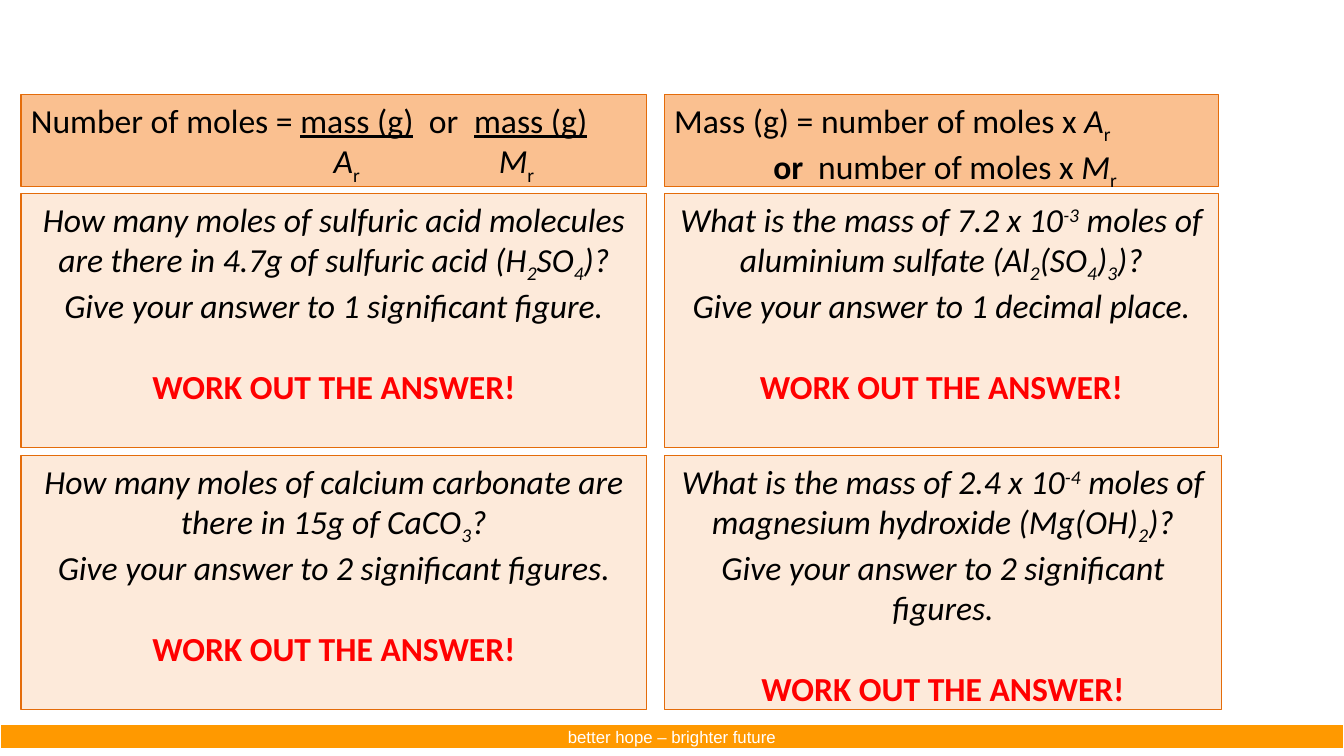
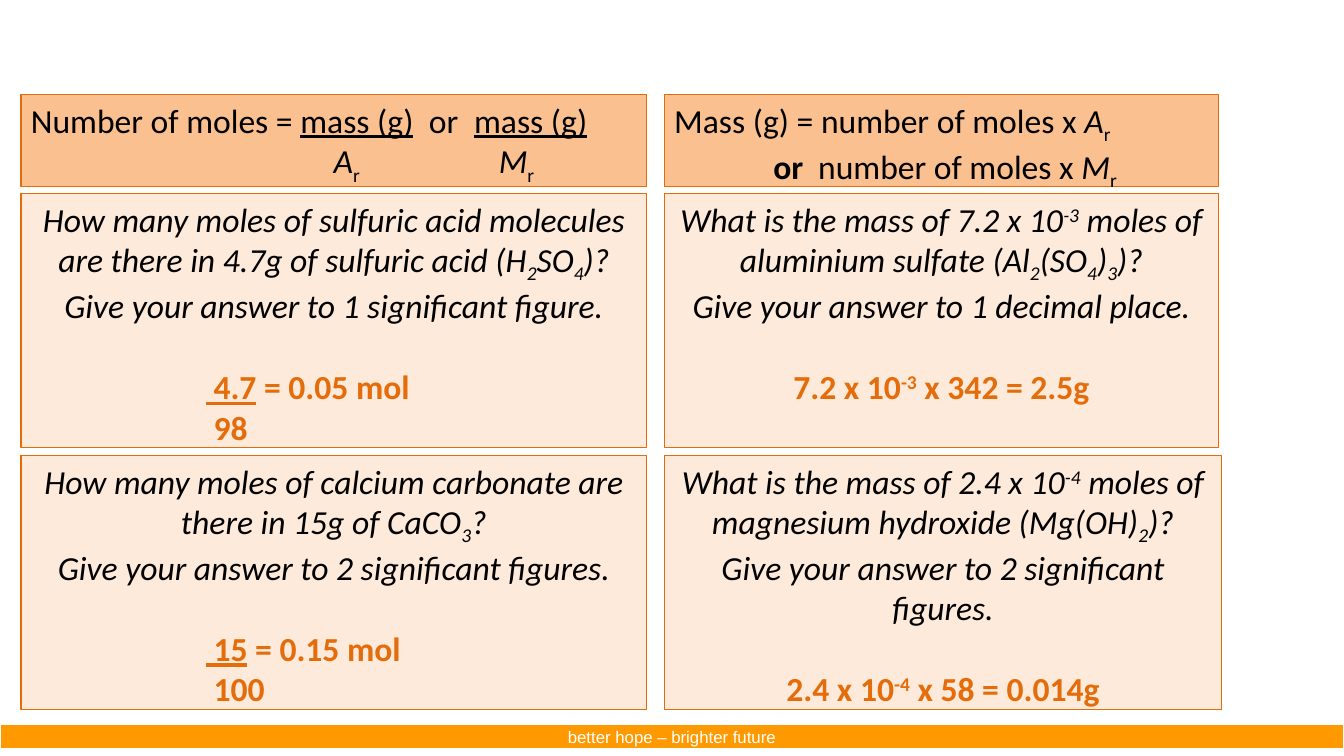
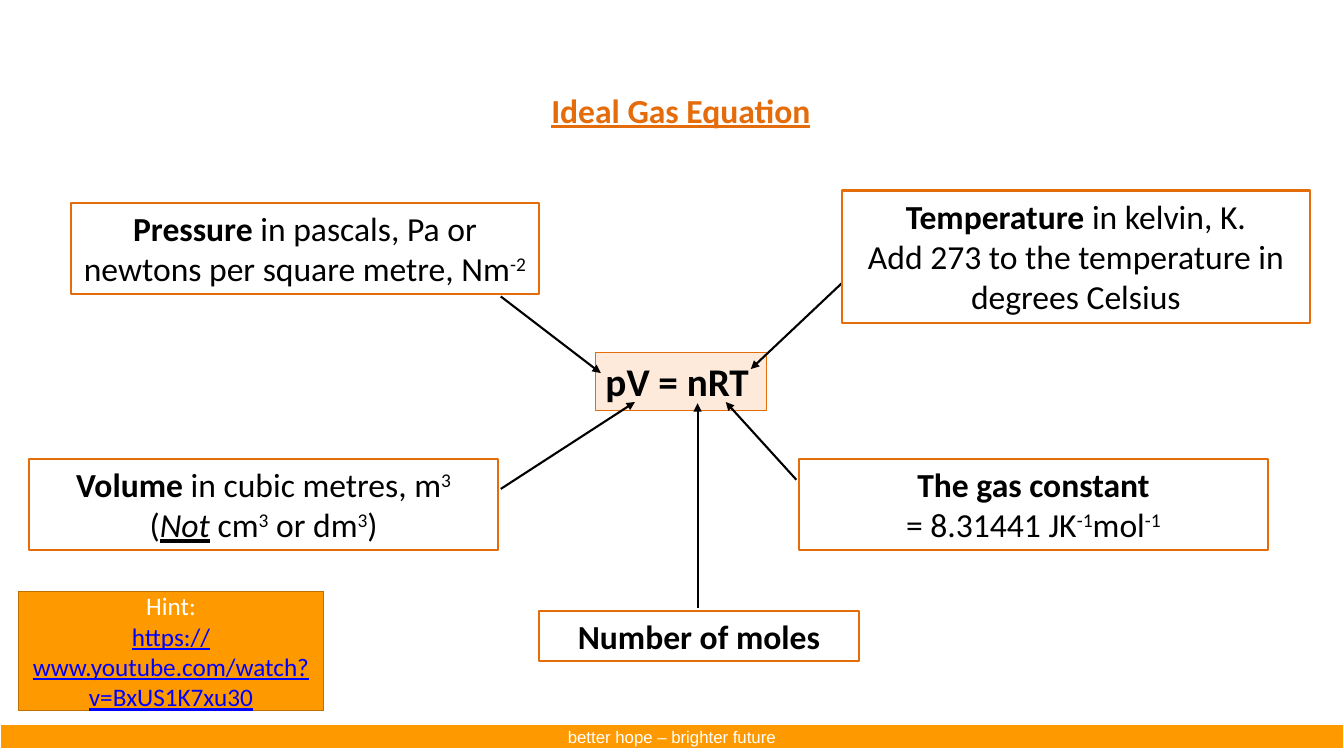
from dataclasses import dataclass

from lxml import etree
from pptx import Presentation
from pptx.dml.color import RGBColor
from pptx.enum import shapes, text
from pptx.oxml.ns import qn
from pptx.util import Cm, Pt

# Shared look
BLACK = RGBColor(0x00, 0x00, 0x00)
WHITE = RGBColor(0xFF, 0xFF, 0xFF)
RED = RGBColor(0xFF, 0x00, 0x00)
LINK_BLUE = RGBColor(0x00, 0x00, 0xFF)
ORANGE = RGBColor(0xE4, 0x6C, 0x0A)
BAND_ORANGE = RGBColor(0xFF, 0x99, 0x00)
BROWN = RGBColor(0xBD, 0x71, 0x00)
PEACH = RGBColor(0xFA, 0xC0, 0x90)
CREAM = RGBColor(0xFD, 0xEA, 0xDA)
LEFT, CENTER = text.PP_ALIGN.LEFT, text.PP_ALIGN.CENTER
TOP, MIDDLE = text.MSO_ANCHOR.TOP, text.MSO_ANCHOR.MIDDLE
BODY_SIZE = 24
BLANK_LINE = 29.3  # height of one body line, in points

# Marks that switch a style on and off inside a text
MARKS = {"*": "bold", "|": "italic", "_": "underline", "~": "sub", "^": "super"}
BASELINES = {"sub": "-25000", "super": "30000"}

# Question grid, in cm: left and width of each column, top of each row
MOLES_COLUMN, MASS_COLUMN = (0.53, 15.77), (16.74, 13.97)
FORMULA_TOP, FORMULA_HEIGHT = 2.39, 2.31
QUESTION_TOPS, QUESTION_HEIGHT = (4.88, 11.48), 6.4
FRACTION_INDENT = 4.41


@dataclass
class Para:
    words: str
    color: RGBColor = BLACK
    align: text.PP_ALIGN = CENTER
    size: float = BODY_SIZE
    font: str = "Calibri"
    tabs: tuple = ()
    indent: float = 0
    before: float = 0


# Text
def split_styles(words):
    """Yield (piece, styles) for a marked-up text."""
    styles, piece = set(), ""
    for char in words:
        if char in MARKS:
            if piece:
                yield piece, set(styles)
            styles ^= {MARKS[char]}
            piece = ""
        else:
            piece += char
    if piece:
        yield piece, styles


def set_stops(paragraph, para):
    props = paragraph._p.get_or_add_pPr()
    if para.indent:
        props.set("marL", str(Cm(para.indent)))
        props.set("indent", "0")
    if para.tabs:
        stops = etree.SubElement(props, qn("a:tabLst"))
        for stop in para.tabs:
            etree.SubElement(stops, qn("a:tab"), pos=str(Cm(stop)), algn="l")


def write(frame, paras, anchor=TOP):
    frame.word_wrap = True
    frame.auto_size = text.MSO_AUTO_SIZE.NONE
    frame.vertical_anchor = anchor
    for index, para in enumerate(paras):
        paragraph = frame.add_paragraph() if index else frame.paragraphs[0]
        set_stops(paragraph, para)
        paragraph.alignment = para.align
        paragraph.space_before = Pt(para.before)
        for piece, styles in split_styles(para.words):
            run = paragraph.add_run()
            run.text = piece
            font = run.font
            font.name, font.size = para.font, Pt(para.size)
            font.color.rgb = para.color
            font.bold = "bold" in styles
            font.italic = "italic" in styles
            font.underline = "underline" in styles
            for style in styles & BASELINES.keys():
                run._r.get_or_add_rPr().set("baseline", BASELINES[style])


# Shapes
def add_box(slide, place, paras, fill=None, line=ORANGE, weight=0.75, anchor=TOP):
    box = slide.shapes.add_shape(shapes.MSO_SHAPE.RECTANGLE, *map(Cm, place))
    box.shadow.inherit = False
    if fill is None:
        box.fill.background()
    else:
        box.fill.solid()
        box.fill.fore_color.rgb = fill
    box.line.color.rgb = line
    box.line.width = Pt(weight)
    write(box.text_frame, paras, anchor)
    return box


def add_arrow(slide, start, end):
    arrow = slide.shapes.add_connector(
        shapes.MSO_CONNECTOR.STRAIGHT, *map(Cm, start + end))
    arrow.line.color.rgb = BLACK
    arrow.line.width = Pt(1.5)
    etree.SubElement(arrow.line._get_or_add_ln(), qn("a:tailEnd"), type="triangle")
    etree.SubElement(arrow._element.spPr, qn("a:effectLst"))


def move_band_to_master(prs, slide):
    """Build the footer band and hang it on the master, so every slide has it."""
    motto = Para("better hope – brighter future", WHITE, size=12, font="Arial")
    band = add_box(slide, (0, 18.24, 33.87, 0.64), [motto],
                   BAND_ORANGE, WHITE, 1.5, MIDDLE)
    prs.slide_master.shapes.element.append(band.element)


# Questions and answers
SULFURIC = ("|How many moles of sulfuric acid molecules are there in 4.7g "
            "of sulfuric acid (H~2~SO~4~)?", "1 significant figure")
CARBONATE = ("|How many moles of calcium carbonate are there in 15g of CaCO~3~?",
             "2 significant figures")
ALUMINIUM = ("|What is the mass of 7.2 x 10^-3^ moles of aluminium sulfate "
             "(Al~2~(SO~4~)~3~)?", "1 decimal place")
MAGNESIUM = ("|What is the mass of 2.4 x 10^-4^ moles of magnesium hydroxide "
             "(Mg(OH)~2~)?", "2 significant figures")


def fraction(numerator, denominator, result):
    style = dict(color=ORANGE, align=LEFT, indent=FRACTION_INDENT)
    return [Para(f"*_ {numerator}_ = {result}", before=BLANK_LINE, **style),
            Para(f"* {denominator}", **style)]


def one_line(words, color=ORANGE):
    return [Para("*" + words, color, before=BLANK_LINE)]


def add_formulas(slide):
    moles = [Para("Number of moles = _mass (g)_\tor\t_mass (g)_",
                  align=LEFT, tabs=(10.03, 11.17)),
             Para("\t|A|~r~\t|M|~r~", align=LEFT, tabs=(7.63, 11.79))]
    mass = [Para("Mass (g) = number of moles x |A|~r~", align=LEFT),
            Para("\t*or*\tnumber of moles x |M|~r~", align=LEFT, tabs=(2.5, 3.63))]
    for (left, width), formula in ((MOLES_COLUMN, moles), (MASS_COLUMN, mass)):
        add_box(slide, (left, FORMULA_TOP, width, FORMULA_HEIGHT), formula, PEACH)


def add_question_slide(slide, answers):
    """Lay out the formulas and four questions, each with its answer lines."""
    add_formulas(slide)
    columns = ((MOLES_COLUMN, (SULFURIC, CARBONATE)),
               (MASS_COLUMN, (ALUMINIUM, MAGNESIUM)))
    answer = iter(answers)
    for (left, width), questions in columns:
        for top, (question, precision) in zip(QUESTION_TOPS, questions):
            extra = 0.08 if question is MAGNESIUM[0] else 0
            paras = [Para(question), Para(f"|Give your answer to {precision}.")]
            add_box(slide, (left, top, width + extra, QUESTION_HEIGHT),
                    paras + next(answer), CREAM)


# Ideal gas equation
def add_gas_slide(slide):
    title = slide.shapes.title
    title.left, title.top, title.width, title.height = map(
        Cm, (0.46, 2.13, 33.4, 1.27))
    write(title.text_frame, [Para("*_Ideal Gas Equation", ORANGE)])

    add_box(slide, (15.01, 8.89, 4.32, 1.45),
            [Para("*pV = nRT", align=LEFT, size=28)], CREAM)

    # Each quantity: box, lines of text, arrow start and end
    quantities = [
        ((1.78, 5.11, 11.81, 2.31),
         ["*Pressure* in pascals, Pa or newtons per square metre, Nm^-2^"],
         (12.62, 7.47), (15.14, 9.4)),
        ((0.74, 11.56, 11.81, 2.31),
         ["*Volume* in cubic metres, m^3^", "(|_Not_ |cm^3^ or dm^3^)"],
         (12.62, 12.32), (16, 10.13)),
        ((13.59, 15.39, 8.05, 1.27), ["*Number of moles"],
         (17.58, 15.32), (17.58, 10.16)),
        ((20.14, 11.56, 11.81, 2.31),
         ["*The gas constant", "= 8.31441 JK^-1^mol^-1^"],
         (20.07, 12.09), (18.29, 10.13)),
        ((21.21, 4.8, 11.81, 3.33),
         ["*Temperature* in kelvin, K.",
          "Add 273 to the temperature in degrees Celsius"],
         (21.21, 7.14), (18.92, 9.3)),
    ]
    for place, lines, start, end in quantities:
        add_arrow(slide, start, end)
        add_box(slide, place, [Para(line) for line in lines], weight=1.5)

    hint = [Para("Hint:", WHITE, size=18),
            Para("_https://www.youtube.com/watch?v=BxUS1K7xu30", LINK_BLUE, size=18)]
    add_box(slide, (0.46, 14.91, 7.7, 3), hint, BAND_ORANGE, BROWN, 1, MIDDLE)


def main():
    prs = Presentation()
    prs.slide_width, prs.slide_height = Cm(33.87), Cm(19.05)
    title_only, blank = prs.slide_layouts[5], prs.slide_layouts[6]

    task = prs.slides.add_slide(blank)
    move_band_to_master(prs, task)
    add_question_slide(task, [one_line("WORK OUT THE ANSWER!", RED)] * 4)

    add_question_slide(prs.slides.add_slide(blank), [
        fraction("4.7", "98", "0.05 mol"),
        fraction("15", "100", "0.15 mol"),
        one_line("7.2 x 10^-3^ x 342 = 2.5g"),
        one_line("2.4 x 10^-4^ x 58 = 0.014g"),
    ])

    add_gas_slide(prs.slides.add_slide(title_only))
    prs.save("out.pptx")


if __name__ == "__main__":
    main()
